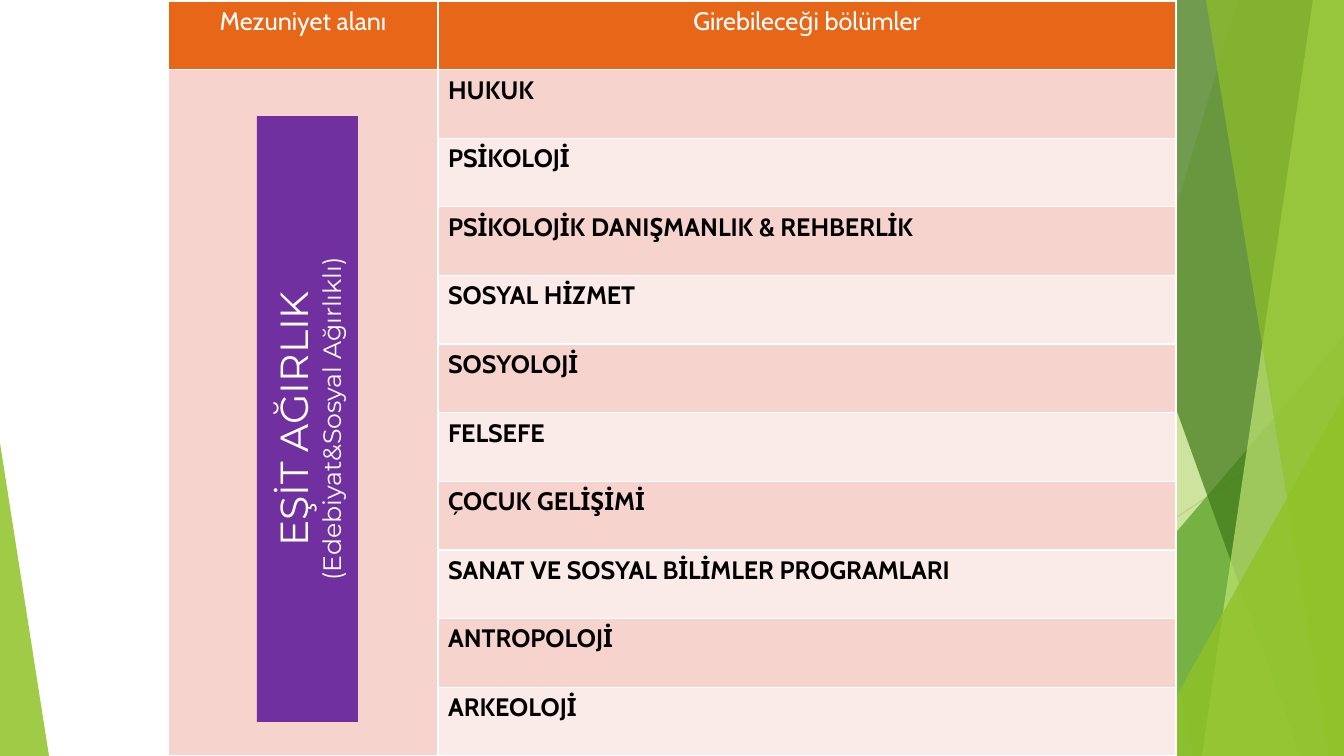
from collections import namedtuple

from lxml import etree
from pptx import Presentation
from pptx import util as u
from pptx.dml.color import RGBColor
from pptx.enum import shapes, text
from pptx.oxml.ns import qn

PX = u.Inches(1) / 100.8
Box = namedtuple("Box", "left top width height")


class Theme:
    white, black = "FFFFFF", "000000"
    header, band_dark, band_light = "E76618", "F6D3CC", "FAEAE8"
    label = "7030A0"
    lime, pale_lime, green, dark_green = "90C226", "C0E474", "54A021", "3F7819"
    grey, light_grey = "BFBFBF", "D9D9D9"
    table_font, label_font = "Cabin", "Montserrat"
    body_size, label_size = 18, 28


DEPARTMENTS = [
    "HUKUK", "PSİKOLOJİ", "PSİKOLOJİK DANIŞMANLIK & REHBERLİK",
    "SOSYAL HİZMET", "SOSYOLOJİ", "FELSEFE", "ÇOCUK GELİŞİMİ",
    "SANAT VE SOSYAL BİLİMLER PROGRAMLARI", "ANTROPOLOJİ", "ARKEOLOJİ",
]


def px(*lengths):
    return [u.Emu(round(length * PX)) for length in lengths]


def rgb(color):
    return RGBColor.from_string(color)


def write(paragraph, words, *, font, size, color, bold=False, align=None):
    run = paragraph.add_run()
    run.text = words
    run.font.name = font
    run.font.size = u.Pt(size)
    run.font.bold = bold
    run.font.color.rgb = rgb(color)
    paragraph.alignment = align


def paint(shape, color, opacity=100):
    shape.shadow.inherit = False
    shape.line.fill.background()
    shape.fill.solid()
    shape.fill.fore_color.rgb = rgb(color)
    if opacity < 100:
        tint = shape._element.spPr.find(".//" + qn("a:srgbClr"))
        etree.SubElement(tint, qn("a:alpha"), val=str(opacity * 1000))


def add_ray(slide, start, end, color):
    ray = slide.shapes.add_connector(
        shapes.MSO_CONNECTOR.STRAIGHT, *px(*start, *end))
    ray.line.color.rgb = rgb(color)
    ray.line.width = u.Pt(0.75)
    etree.SubElement(ray._element.spPr, qn("a:effectLst"))


def add_corner(slide, box, apex, color, opacity):
    corner = slide.shapes.add_shape(
        shapes.MSO_SHAPE.ISOSCELES_TRIANGLE, *px(*box))
    corner.adjustments[0] = apex
    paint(corner, color, opacity)


def add_facets(slide, box):
    """Overlapping green facets, measured inward from the right edge."""
    right, bottom = box.left + box.width, box.top + box.height

    def band(top_inset, bottom_inset, color, opacity):
        builder = slide.shapes.build_freeform(
            right - top_inset, box.top, scale=PX)
        builder.add_line_segments([
            (right, box.top), (right, bottom), (right - bottom_inset, bottom)])
        paint(builder.convert_to_shape(), color, opacity)

    def corner(width, height, color, opacity):
        place = Box(right - width, bottom - height, width, height)
        add_corner(slide, place, 1, color, opacity)

    add_ray(slide, (right - 311, box.top), (right - 177, bottom), Theme.grey)
    add_ray(slide, (right, box.top + 406), (box.left, bottom), Theme.light_grey)
    band(106, 332, Theme.lime, 30)
    band(286, 152, Theme.lime, 20)
    corner(359, 420, Theme.green, 72)
    band(315, 43, Theme.dark_green, 70)
    band(31, 142, Theme.pale_lime, 70)
    band(138, 15, Theme.lime, 65)
    corner(201, 360, Theme.lime, 80)


def style_cell(cell, color):
    cell.fill.solid()
    cell.fill.fore_color.rgb = rgb(color)
    # Borders come before the fill in the cell properties
    for place, side in enumerate(("lnL", "lnR", "lnT", "lnB")):
        border = etree.Element(qn("a:" + side), w=str(u.Pt(1)))
        fill = etree.SubElement(border, qn("a:solidFill"))
        etree.SubElement(fill, qn("a:srgbClr"), val=Theme.white)
        cell._tc.get_or_add_tcPr().insert(place, border)


def add_department_table(slide, box):
    row_count = len(DEPARTMENTS) + 1
    table = slide.shapes.add_table(row_count, 2, *px(*box)).table
    field_width = 270
    table.columns[0].width, table.columns[1].width = px(
        field_width, box.width - field_width)
    for row in table.rows:
        row.height, = px(box.height / row_count)

    # Header row
    for column, heading in enumerate(("Mezuniyet alanı", "Girebileceği bölümler")):
        cell = table.cell(0, column)
        style_cell(cell, Theme.header)
        write(cell.text_frame.paragraphs[0], heading, font=Theme.table_font,
              size=Theme.body_size, color=Theme.white,
              align=text.PP_ALIGN.CENTER)

    # Banded departments beside one merged field cell
    for row, department in enumerate(DEPARTMENTS, 1):
        style_cell(table.cell(row, 0), Theme.band_dark)
        cell = table.cell(row, 1)
        style_cell(cell, Theme.band_dark if row % 2 else Theme.band_light)
        write(cell.text_frame.paragraphs[0], department, font=Theme.table_font,
              size=Theme.body_size, color=Theme.black, bold=True)
    table.cell(1, 0).merge(table.cell(row_count - 1, 0))


def add_field_label(slide, box):
    """Label turned to read upward inside the upright box."""
    left = box.left + (box.width - box.height) / 2
    top = box.top + (box.height - box.width) / 2
    label = slide.shapes.add_shape(
        shapes.MSO_SHAPE.RECTANGLE, *px(left, top, box.height, box.width))
    label.rotation = 270
    paint(label, Theme.label)
    frame = label.text_frame
    frame.word_wrap = True
    frame.vertical_anchor = text.MSO_ANCHOR.MIDDLE
    style = dict(font=Theme.label_font, color=Theme.white,
                 align=text.PP_ALIGN.CENTER)
    write(frame.paragraphs[0], "EŞİT AĞIRLIK", size=Theme.label_size, **style)
    write(frame.add_paragraph(), "(Edebiyat&Sosyal Ağırlıklı)",
          size=Theme.body_size, **style)


def main():
    deck = Presentation()
    deck.slide_width, deck.slide_height = px(1344, 756)
    slide = deck.slides.add_slide(deck.slide_layouts[6])
    add_facets(slide, Box(818, 0, 526, 756))
    add_corner(slide, Box(0, 443, 49, 313), 0, Theme.lime, 85)
    add_department_table(slide, Box(168, 1, 1008, 755))
    add_field_label(slide, Box(257, 116, 101, 606))
    deck.save("out.pptx")


if __name__ == "__main__":
    main()
